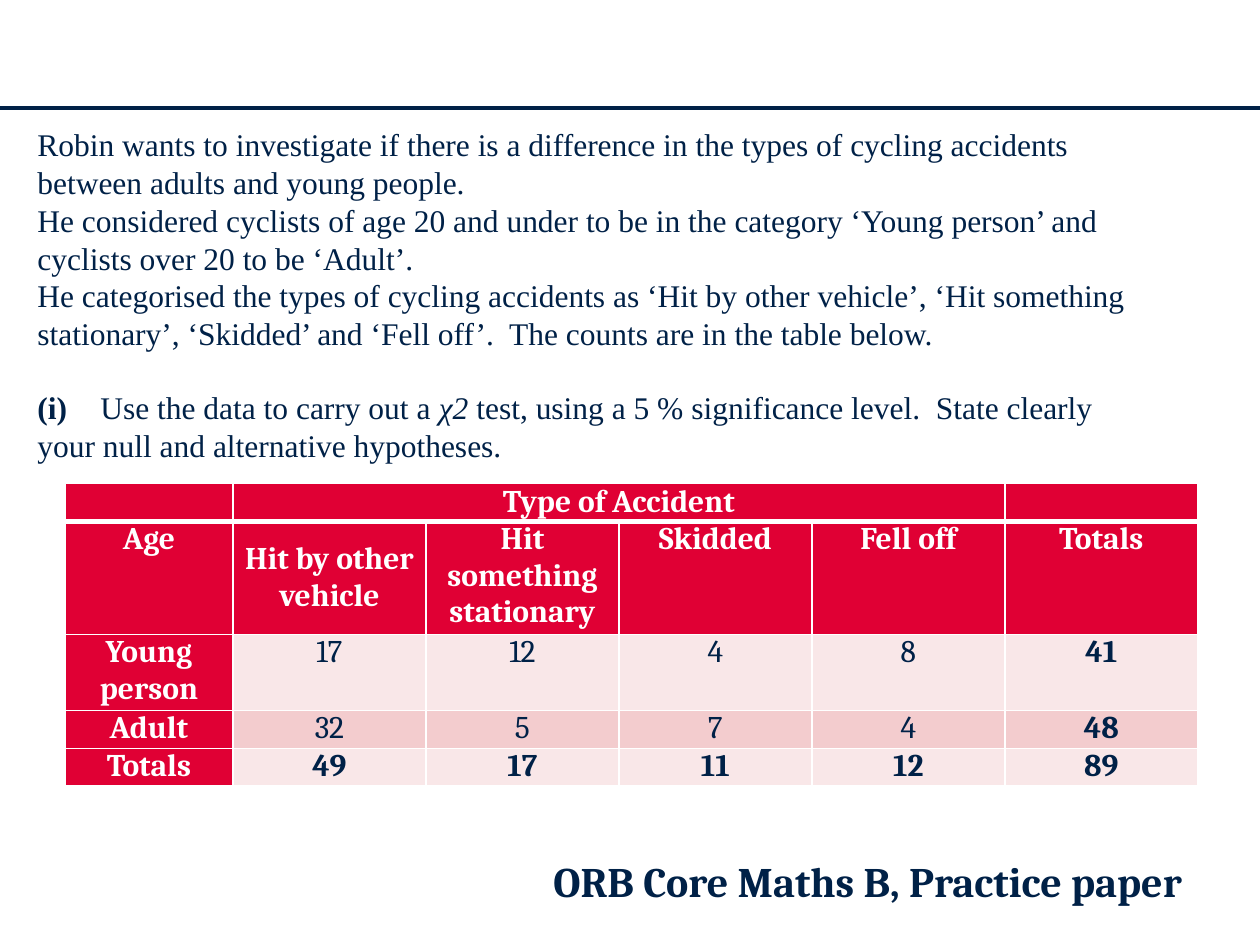
from lxml.etree import SubElement
from pptx import Presentation
from pptx.dml.color import RGBColor
from pptx.enum.shapes import MSO_CONNECTOR
from pptx.enum.text import MSO_ANCHOR as Anchor, PP_ALIGN as Align
from pptx.oxml.ns import qn
from pptx.util import Pt

# Content
QUESTION = [
    [("Robin wants to investigate if there is a difference in the types of cycling "
      "accidents between adults and young people.", {})],
    [("He considered cyclists of age 20 and under to be in the category "
      "‘Young person’ and cyclists over 20 to be ‘Adult’.", {})],
    [("He categorised the types of cycling accidents as ‘Hit by other vehicle’, "
      "‘Hit something stationary’, ‘Skidded’ and ‘Fell off’.  "
      "The counts are in the table below.", {})],
    [("(i)\t", {"bold": True}), ("Use the data to carry out a ", {}),
     ("χ2", {"italic": True}),
     (" test, using a 5 % significance level.  "
      "State clearly your null and alternative hypotheses.", {})],
]
ACCIDENTS = [
    ["", "Type of Accident", "", "", "", ""],
    ["Age", "Hit by other vehicle", "Hit something stationary",
     "Skidded", "Fell off", "Totals"],
    ["Young person", "17", "12", "4", "8", "41"],
    ["Adult", "32", "5", "7", "4", "48"],
    ["Totals", "49", "17", "11", "12", "89"],
]
SOURCE = "ORB Core Maths B, Practice paper"

# Theme
THEME = {
    "navy": RGBColor.from_string("002147"),
    "red": RGBColor.from_string("E00034"),
    "white": RGBColor.from_string("FFFFFF"),
    "bands": [RGBColor.from_string("F9E7E8"), RGBColor.from_string("F3CCCE")],
    "body": 18, "footer": 24, "serif": "Times New Roman", "slab": "Cambria",
}

# Layout in px
PX = 914400 // 126
SLIDE_W, SLIDE_H = 1260, 945
RULE_Y = 108
QUESTION_BOX = (25, 116, 1131, 357)
SOURCE_BOX = (541, 849, 694, 63)
TABLE_X, TABLE_Y = 65, 483
COLUMNS = [168] + [193] * 5
ROWS = [37, 113, 76, 38, 37]
CELL_INSET = 9


def px(*lengths):
    return [length * PX for length in lengths]


def apply(target, values):
    for key, value in values.items():
        setattr(target, key, value)


def write(paragraph, words, color, size, name, **style):
    run = paragraph.add_run()
    run.text = words
    apply(run.font, {"size": Pt(size), "name": name, **style})
    run.font.color.rgb = color


def add_frame(box):
    frame = slide.shapes.add_textbox(*px(*box)).text_frame
    frame.word_wrap = True
    return frame


def border(cell, widths):
    properties = cell._tc.get_or_add_tcPr()
    for side, width in zip("LRTB", widths):
        edge = SubElement(properties, qn(f"a:ln{side}"), w=str(Pt(width)))
        fill = SubElement(edge, qn("a:solidFill"))
        SubElement(fill, qn("a:srgbClr"), val=str(THEME["white"]))


deck = Presentation()
deck.slide_width, deck.slide_height = px(SLIDE_W, SLIDE_H)
slide = deck.slides.add_slide(deck.slide_layouts[6])

# Header rule
rule = slide.shapes.add_connector(
    MSO_CONNECTOR.STRAIGHT, *px(0, RULE_Y, SLIDE_W, RULE_Y))
rule.line.color.rgb = THEME["navy"]
rule.line.width = Pt(2.25)
SubElement(rule._element.spPr, qn("a:effectLst"))

# Accident table
table = slide.shapes.add_table(
    len(ROWS), len(COLUMNS),
    *px(TABLE_X, TABLE_Y, sum(COLUMNS), sum(ROWS))).table
for column, width in zip(table.columns, px(*COLUMNS)):
    column.width = width
for row, height in zip(table.rows, px(*ROWS)):
    row.height = height

last = len(COLUMNS) - 1
for r, counts in enumerate(ACCIDENTS):
    for c, words in enumerate(counts):
        cell = table.cell(r, c)
        heading = r < 2 or c == 0
        total = r == len(ROWS) - 1 or c == last
        border(cell, (1, 1, 3 if r == 1 else 1, 3 if r == 0 else 1))
        cell.fill.solid()
        cell.fill.fore_color.rgb = THEME["red"] if heading else THEME["bands"][r % 2]
        inset = CELL_INSET * PX
        apply(cell, {"margin_left": inset, "margin_right": inset,
                     "margin_top": 0, "margin_bottom": 0,
                     "vertical_anchor": Anchor.MIDDLE if r < 2 and c == 1 else Anchor.TOP})
        if words:
            paragraph = cell.text_frame.paragraphs[0]
            paragraph.alignment = Align.CENTER
            write(paragraph, words, THEME["white"] if heading else THEME["navy"],
                  THEME["body"], THEME["slab"], bold=heading or total)
table.cell(0, 1).merge(table.cell(0, last - 1))

# Question text, with one line of space before the task
question = add_frame(QUESTION_BOX)
question.vertical_anchor = Anchor.MIDDLE
for i, runs in enumerate(QUESTION):
    paragraph = question.add_paragraph() if i else question.paragraphs[0]
    for words, style in runs:
        write(paragraph, words, THEME["navy"], THEME["body"], THEME["serif"], **style)
paragraph.space_before = Pt(20.7)

# Source line
credit = add_frame(SOURCE_BOX).paragraphs[0]
credit.space_after = Pt(6)
write(credit, SOURCE, THEME["navy"], THEME["footer"], THEME["slab"], bold=True)

deck.save("out.pptx")
